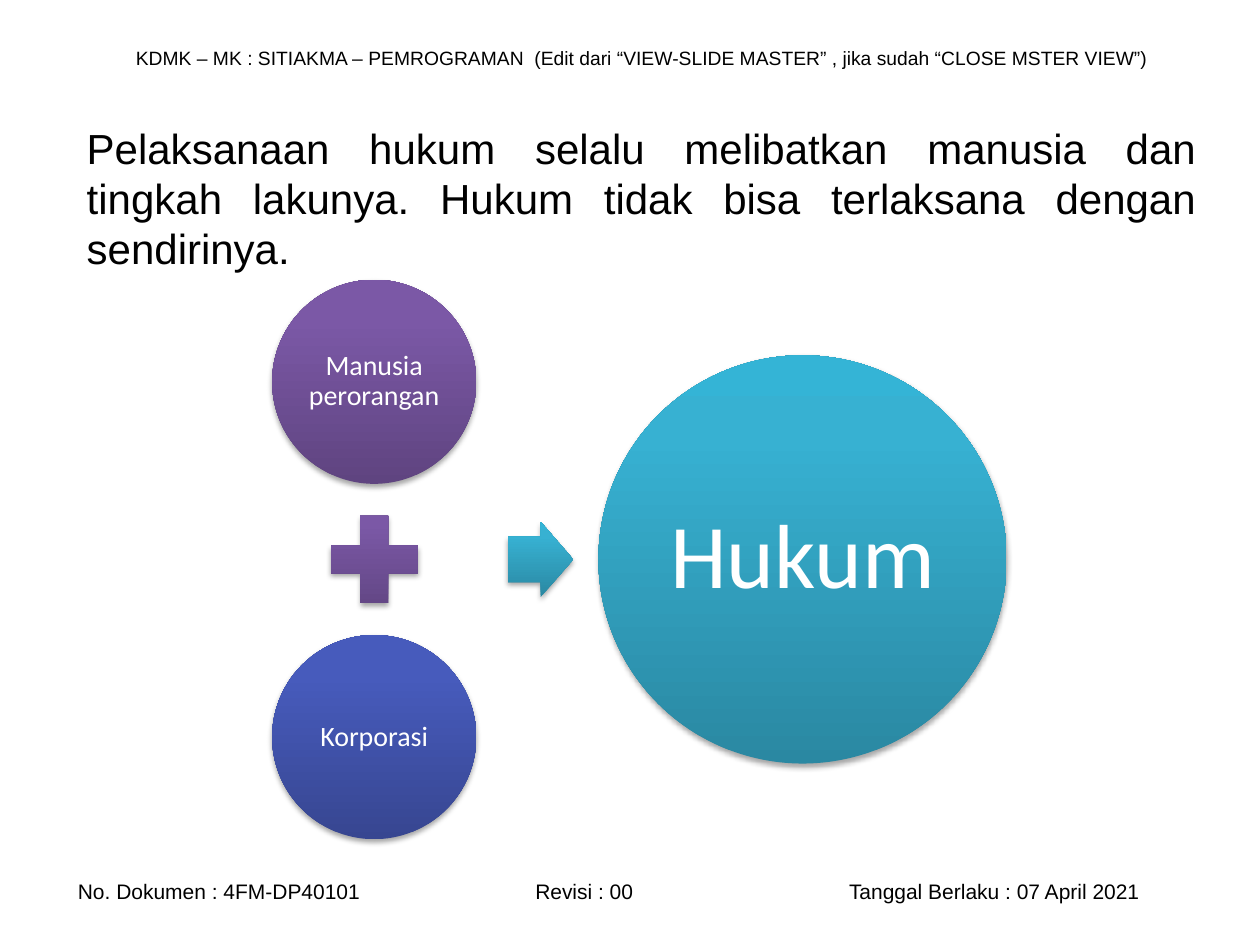
from lxml import etree
from pptx import Presentation
from pptx.dml.color import RGBColor
from pptx.enum.shapes import MSO_SHAPE
from pptx.enum.text import MSO_ANCHOR, PP_ALIGN
from pptx.oxml.ns import qn
from pptx.util import Inches, Pt

OVAL, PLUS, ARROW = MSO_SHAPE.OVAL, MSO_SHAPE.MATH_PLUS, MSO_SHAPE.RIGHT_ARROW
TOP, MIDDLE = MSO_ANCHOR.TOP, MSO_ANCHOR.MIDDLE
CENTER, JUSTIFY, LEFT = PP_ALIGN.CENTER, PP_ALIGN.JUSTIFY, PP_ALIGN.LEFT

COLORS = {"text": "000000", "label": "FFFFFF", "shadow": "000000"}
GRADIENTS = {
    "purple": ("5F4480", "7B58A6", "7C57A8"),
    "blue": ("374691", "475BBC", "455ABF"),
    "teal": ("2A88A2", "37B1D2", "34B4D6"),
}
STOPS = (0, 80, 100)

HEADER = ("KDMK – MK : SITIAKMA – PEMROGRAMAN  (Edit dari “VIEW-SLIDE MASTER” , "
          "jika sudah “CLOSE MSTER VIEW”)")
STATEMENT = ("Pelaksanaan hukum selalu melibatkan manusia dan tingkah lakunya. "
             "Hukum tidak bisa terlaksana dengan sendirinya.")
FOOTER = ("No. Dokumen : 4FM-DP40101", "Revisi : 00", "Tanggal Berlaku : 07 April 2021")
FOOTER_TABS = (3.63, 6.12)

TEXTS = [
    (HEADER, (0.98, 0.31, 8.35, 0.29), 11, MIDDLE, LEFT),
    ("\t".join(FOOTER), (0.52, 6.92, 9.13, 0.3), 12, MIDDLE, LEFT),
    (STATEMENT, (0.59, 0.92, 9, 1.42), 24, TOP, JUSTIFY),
]

CAUSE, SIGN, RESULT = 1.62, 0.94, 3.24
COLUMN_GAP = 0.13
ARROW_SIZE = (0.52, 0.6)
CENTER_X, CENTER_Y = 2.97, 4.44
STEP = CAUSE / 2 + COLUMN_GAP + SIGN / 2
ARROW_X, RESULT_X = 4.29, 6.37

DIAGRAM = [
    (OVAL, "purple", CENTER_X, CENTER_Y - STEP, (CAUSE, CAUSE), "Manusia perorangan", 16, 0.02),
    (PLUS, "purple", CENTER_X, CENTER_Y, (SIGN, SIGN), "", 0, 0),
    (OVAL, "blue", CENTER_X, CENTER_Y + STEP, (CAUSE, CAUSE), "Korporasi", 16, 0.02),
    (ARROW, "teal", ARROW_X, CENTER_Y, ARROW_SIZE, "", 0, 0),
    (OVAL, "teal", RESULT_X, CENTER_Y, (RESULT, RESULT), "Hukum", 52, 0.07),
]


def style_font(para, name, size, color):
    for span in para.runs:
        span.font.name = name
        span.font.size = Pt(size)
        span.font.color.rgb = RGBColor.from_string(COLORS[color])


def add_text(page, text, place, size, anchor, align):
    box = page.shapes.add_textbox(*map(Inches, place))
    frame = box.text_frame
    frame.word_wrap = True
    frame.vertical_anchor = anchor
    frame.text = text
    para = frame.paragraphs[0]
    para.alignment = align
    if "\t" in text:
        tabs = etree.SubElement(para._p.get_or_add_pPr(), qn("a:tabLst"))
        for position in FOOTER_TABS:
            etree.SubElement(tabs, qn("a:tab"), pos=str(Inches(position)), algn="l")
    style_font(para, "Arial", size, "text")


def paint(shape, gradient):
    shape.fill.gradient()
    shape.fill.gradient_angle = 90
    stops = shape._element.spPr.find(".//" + qn("a:gsLst"))
    stops.clear()
    for percent, color in zip(STOPS, GRADIENTS[gradient]):
        stop = etree.SubElement(stops, qn("a:gs"), pos=str(percent * 1000))
        etree.SubElement(stop, qn("a:srgbClr"), val=color)
    shape.line.fill.background()
    shape.shadow.inherit = False
    effects = shape._element.spPr.find(qn("a:effectLst"))
    shadow = etree.SubElement(effects, qn("a:outerShdw"), blurRad=str(Pt(3.1)),
                              dist=str(Pt(1.8)), dir="5400000", rotWithShape="0")
    tint = etree.SubElement(shadow, qn("a:srgbClr"), val=COLORS["shadow"])
    etree.SubElement(tint, qn("a:alpha"), val="35000")


def add_part(page, kind, gradient, x, y, extent, label, size, inset):
    width, height = extent
    place = (x - width / 2, y - height / 2, width, height)
    shape = page.shapes.add_shape(kind, *map(Inches, place))
    paint(shape, gradient)
    if kind == ARROW:
        shape.adjustments[0] = 0.6
    if label:
        frame = shape.text_frame
        frame.word_wrap = True
        frame.vertical_anchor = MIDDLE
        frame.margin_left = frame.margin_right = Inches(inset)
        frame.margin_top = frame.margin_bottom = Inches(inset)
        frame.text = label
        para = frame.paragraphs[0]
        para.alignment = CENTER
        para.line_spacing = 0.9
        style_font(para, "Calibri", size, "label")


def main():
    deck = Presentation()
    deck.slide_width, deck.slide_height = Inches(10), Inches(7.5)
    page = deck.slides.add_slide(deck.slide_layouts[6])
    for item in TEXTS:
        add_text(page, *item)
    for part in DIAGRAM:
        add_part(page, *part)
    deck.save("out.pptx")


if __name__ == "__main__":
    main()
